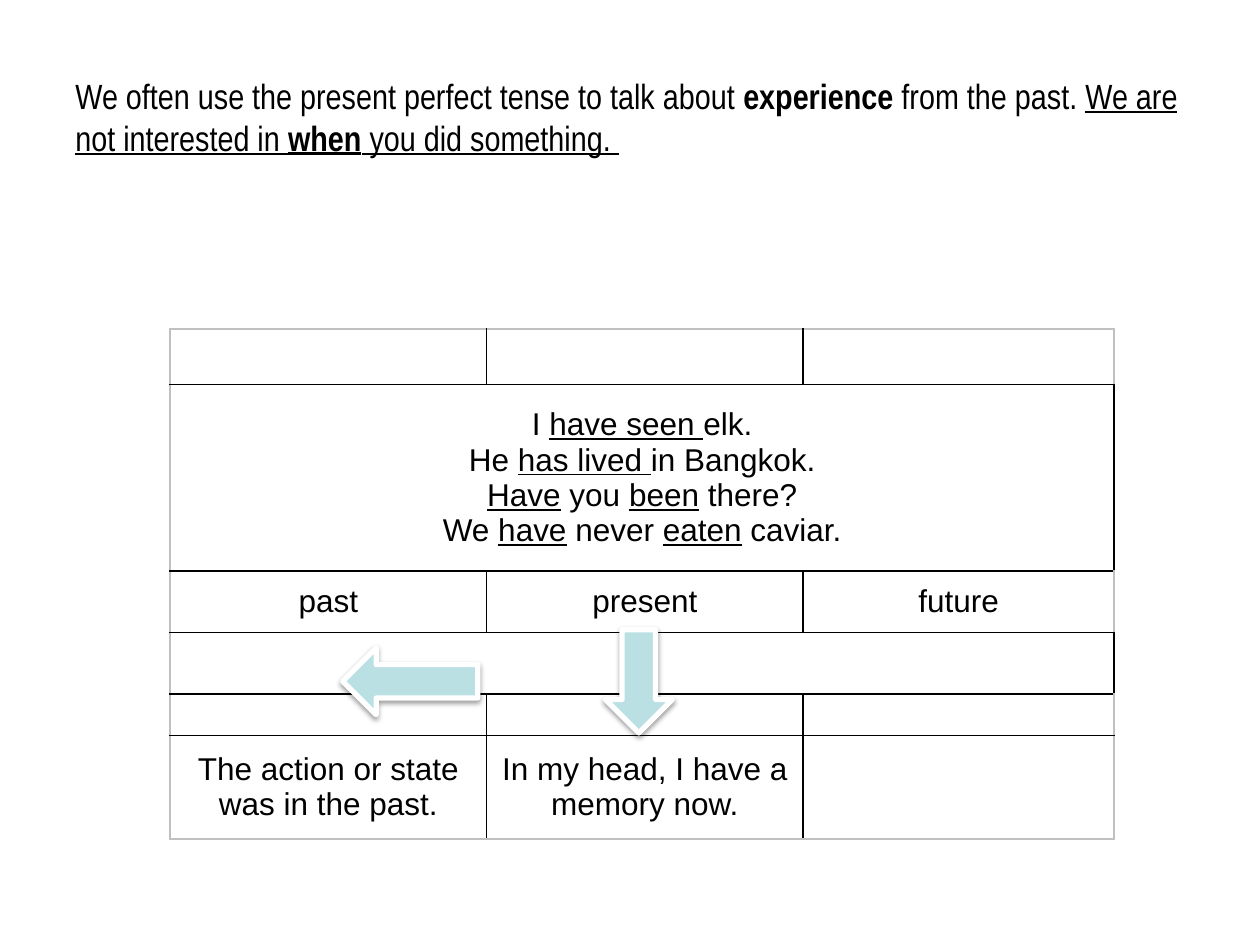
from lxml import etree
from pptx import Presentation
from pptx.dml.color import RGBColor
from pptx.enum.shapes import MSO_SHAPE
from pptx.enum.text import MSO_ANCHOR, PP_ALIGN
from pptx.oxml import parse_xml
from pptx.oxml.ns import nsdecls
from pptx.util import Cm, Pt

LEFT_ARROW = MSO_SHAPE.LEFT_ARROW
MIDDLE = MSO_ANCHOR.MIDDLE
CENTER = PP_ALIGN.CENTER


def rgb(value):
    return RGBColor.from_string(value)


def write(p, lines, font, size):
    p.font.name = font
    p.font.size = Pt(size)
    p.font.color.rgb = rgb("000000")
    for i, line in enumerate(lines):
        if i:
            p.add_line_break()
        for text, style in line:
            r = p.add_run()
            r.text = text
            r.font.name = font
            r.font.size = Pt(size)
            if "b" in style:
                r.font.bold = True
            if "u" in style:
                r.font.underline = True


prs = Presentation()
prs.slide_width = Cm(25.4)
prs.slide_height = Cm(19.05)
s = prs.slides.add_slide(prs.slide_layouts[6])

sp = s.shapes.add_textbox(Cm(1.27), Cm(1.37), Cm(22.86), Cm(1.96))
tf = sp.text_frame
tf.word_wrap = True
tf.vertical_anchor = MIDDLE
title = [
    ("We often use the present perfect tense to talk about ", ""),
    ("experience", "b"),
    (" from the past. ", ""),
    ("We are not interested in ", "u"),
    ("when", "bu"),
    (" you did something. ", "u"),
]
write(tf.paragraphs[0], [title], "Arial Narrow", 20)

widths = [6.38, 6.38, 6.27]
heights = [1.12, 3.76, 1.24, 1.24, 0.84, 2.08]
examples = [
    [("I ", ""), ("have seen ", "u"), ("elk.", "")],
    [("He ", ""), ("has lived ", "u"), ("in Bangkok.", "")],
    [("Have", "u"), (" you ", ""), ("been", "u"), (" there?", "")],
    [("We ", ""), ("have", "u"), (" never ", ""), ("eaten", "u"), (" caviar.", "")],
]
cells = {
    (1, 0): examples,
    (2, 0): [[("past", "")]],
    (2, 1): [[("present", "")]],
    (2, 2): [[("future", "")]],
    (5, 0): [[("The action or state was in the past.", "")]],
    (5, 1): [[("In my head, I have a memory now.", "")]],
}
rows, cols = len(heights), len(widths)
frame = s.shapes.add_table(rows, cols, Cm(3.43), Cm(6.63),
                           Cm(sum(widths)), Cm(sum(heights)))
table = frame.table
table.first_row = False
table.horz_banding = False
for column, width in zip(table.columns, widths):
    column.width = Cm(width)
for row, height in zip(table.rows, heights):
    row.height = Cm(height)
for i in (1, 3):
    table.cell(i, 0).merge(table.cell(i, cols - 1))

for i in range(rows):
    for j in range(cols):
        cell = table.cell(i, j)
        lines = cells.get((i, j), [])
        margin = Cm(0.18 if lines else 0)
        cell.margin_left = cell.margin_right = margin
        cell.margin_top = cell.margin_bottom = margin
        cell.vertical_anchor = MIDDLE
        p = cell.text_frame.paragraphs[0]
        p.alignment = CENTER
        write(p, lines, "Arial", 18)
        edges = {"L": j == 0, "R": j == cols - 1, "T": i == 0, "B": i == rows - 1}
        for side, outer in edges.items():
            color = "C0C0C0" if outer else "000000"
            cell._tc.get_or_add_tcPr().append(parse_xml(
                f'<a:ln{side} {nsdecls("a")} w="{Pt(1)}"><a:solidFill>'
                f'<a:srgbClr val="{color}"/></a:solidFill></a:ln{side}>'))
        cell.fill.background()

for left, width, rotation in [(6.91, 2.72, 0), (11.84, 2.08, 270)]:
    sp = s.shapes.add_shape(LEFT_ARROW, Cm(left), Cm(13.06), Cm(width), Cm(1.35))
    sp.rotation = rotation
    sp.fill.solid()
    sp.fill.fore_color.rgb = rgb("BBE0E3")
    sp.line.color.rgb = rgb("FFFFFF")
    sp.line.width = Pt(3)
    sp.shadow.inherit = False
    effects = sp._element.spPr.find("{*}effectLst")
    effects.append(etree.fromstring(
        f'<a:outerShdw {nsdecls("a")} blurRad="{Pt(3.1)}" dist="{Pt(1.6)}" '
        'dir="5400000" rotWithShape="0"><a:srgbClr val="000000">'
        '<a:alpha val="38000"/></a:srgbClr></a:outerShdw>'))

prs.save("out.pptx")
